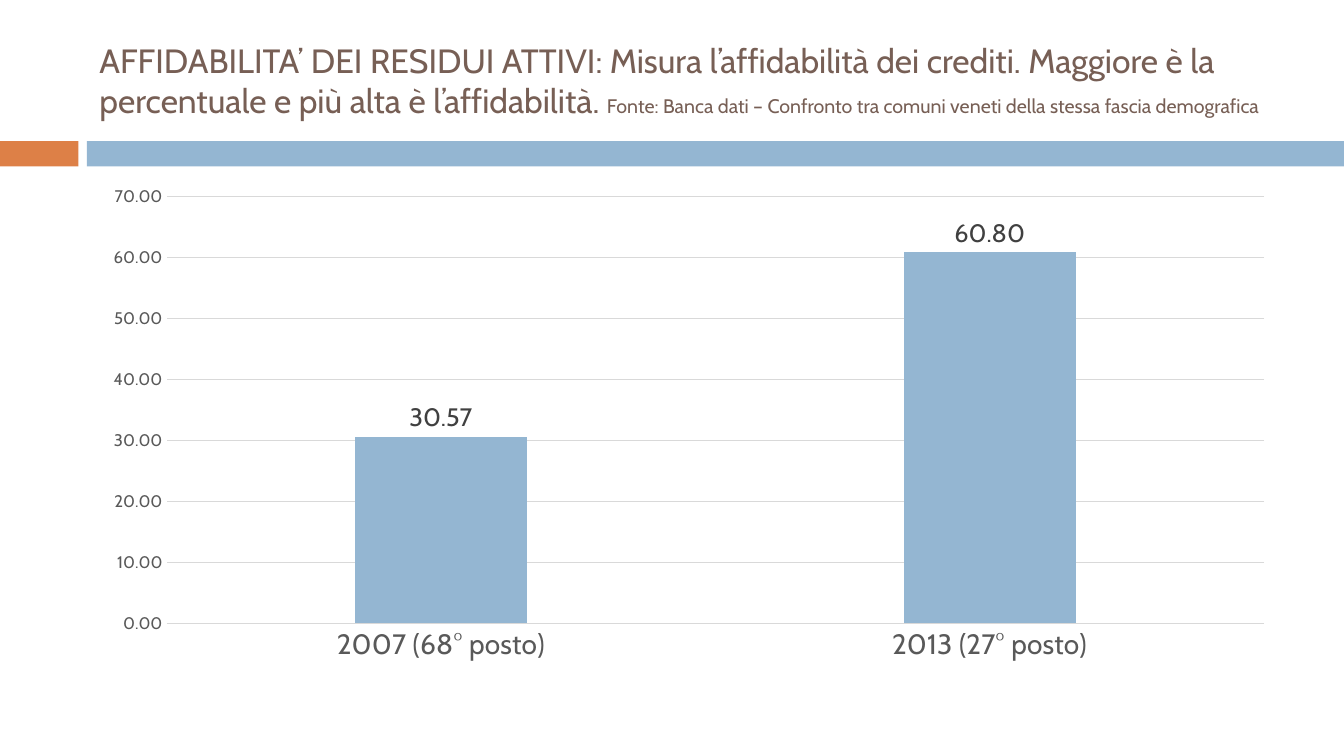
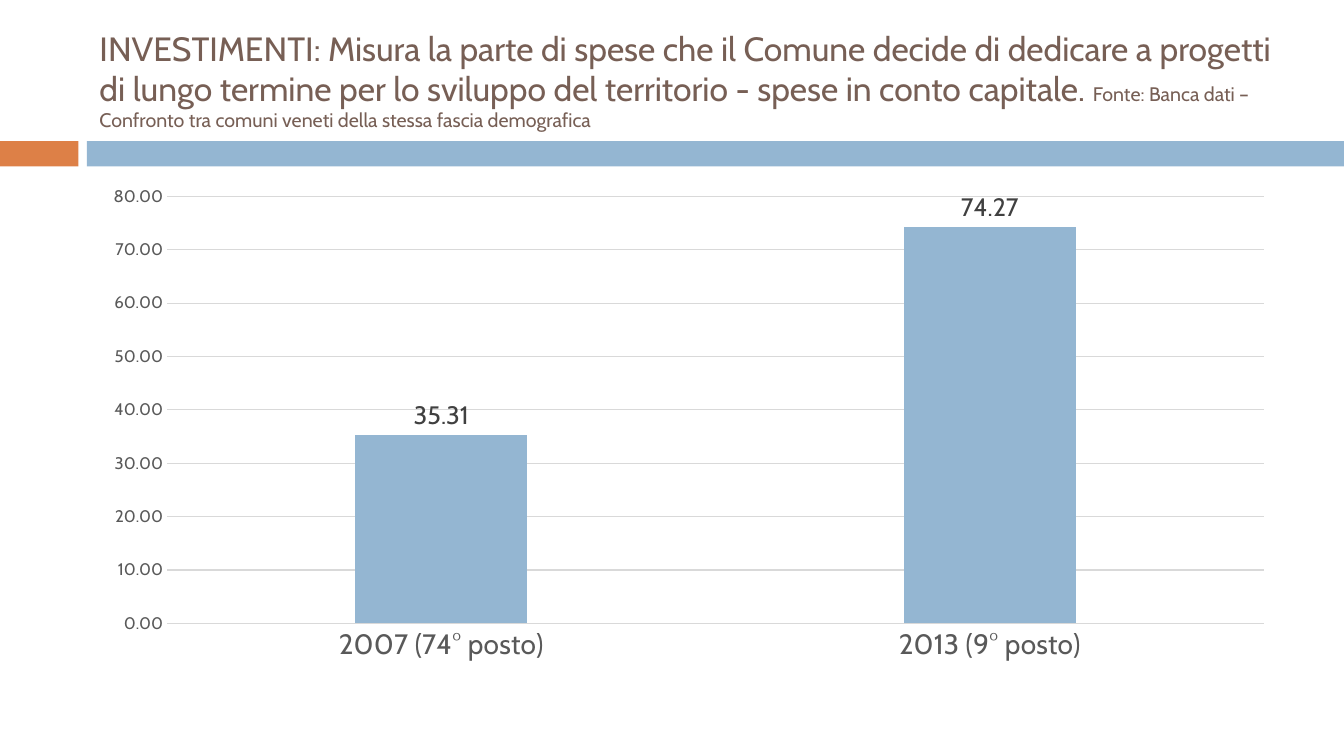
import pptx
import pptx.chart.data
import pptx.dml.color
import pptx.enum.chart
import pptx.enum.shapes
import pptx.enum.text
import pptx.util

Pt = pptx.util.Pt


def color(value):
    return pptx.dml.color.RGBColor.from_string(value)


class Deck:
    """Holds the shared style and draws elements on the current slide."""

    FONT = "Cabin"
    BROWN = "775F55"
    ORANGE = "DD8047"
    BLUE = "94B6D2"
    LABEL_GRAY = "404040"
    AXIS_GRAY = "595959"
    LINE_GRAY = "D9D9D9"
    NUMBER_FORMAT = "#,##0.00"
    WIDTH, HEIGHT = 960, 540
    LEFT, CONTENT_WIDTH = 64, 856
    SOURCE = "Fonte: Banca dati – Confronto tra comuni veneti della stessa fascia demografica"

    def __init__(self):
        self.presentation = pptx.Presentation()
        self.presentation.slide_width = Pt(self.WIDTH)
        self.presentation.slide_height = Pt(self.HEIGHT)
        self.slide = None

    def add_slide(self):
        self.slide = self.presentation.slides.add_slide(self.presentation.slide_layouts[6])
        self.add_band(0, 56, self.ORANGE)
        self.add_band(62, self.WIDTH - 62, self.BLUE)

    def add_band(self, left, width, fill):
        shape = self.slide.shapes.add_shape(
            pptx.enum.shapes.MSO_SHAPE.RECTANGLE, Pt(left), Pt(100.8), Pt(width), Pt(18))
        shape.shadow.inherit = False
        shape.fill.solid()
        shape.fill.fore_color.rgb = color(fill)
        shape.line.fill.background()

    def style_font(self, font, size, value):
        font.name = self.FONT
        font.size = Pt(size)
        font.color.rgb = color(value)

    def add_title(self, text):
        shape = self.slide.shapes.add_textbox(
            Pt(self.LEFT), Pt(18), Pt(self.CONTENT_WIDTH), Pt(78))
        frame = shape.text_frame
        frame.word_wrap = True
        frame.vertical_anchor = pptx.enum.text.MSO_ANCHOR.MIDDLE
        paragraph = frame.paragraphs[0]
        for content, size in ((text + " ", 24), (self.SOURCE, 14)):
            run = paragraph.add_run()
            run.text = content
            self.style_font(run.font, size, self.BROWN)

    def style_line(self, line):
        line.color.rgb = color(self.LINE_GRAY)
        line.width = Pt(0.75)

    def add_column_chart(self, values, maximum):
        data = pptx.chart.data.CategoryChartData(number_format=self.NUMBER_FORMAT)
        data.categories = list(values)
        data.add_series("Series 1", list(values.values()))
        chart = self.slide.shapes.add_chart(
            pptx.enum.chart.XL_CHART_TYPE.COLUMN_CLUSTERED,
            Pt(self.LEFT), Pt(126), Pt(self.CONTENT_WIDTH), Pt(354), data).chart
        self.style_font(chart.font, 10, "000000")
        chart.has_legend = False
        chart.has_title = False

        for axis, size in ((chart.category_axis, 20), (chart.value_axis, 12)):
            axis.major_tick_mark = pptx.enum.chart.XL_TICK_MARK.NONE
            axis.minor_tick_mark = pptx.enum.chart.XL_TICK_MARK.NONE
            self.style_font(axis.tick_labels.font, size, self.AXIS_GRAY)
        self.style_line(chart.category_axis.format.line)

        value_axis = chart.value_axis
        value_axis.minimum_scale = 0
        value_axis.maximum_scale = maximum
        value_axis.major_unit = 10
        value_axis.format.line.fill.background()
        value_axis.has_major_gridlines = True
        self.style_line(value_axis.major_gridlines.format.line)
        value_axis.tick_labels.number_format = self.NUMBER_FORMAT
        value_axis.tick_labels.number_format_is_linked = False

        plot = chart.plots[0]
        plot.gap_width = 219
        plot.overlap = -27
        plot.vary_by_categories = False
        series = plot.series[0]
        series.format.fill.solid()
        series.format.fill.fore_color.rgb = color(self.BLUE)
        labels = series.data_labels
        labels.show_value = True
        labels.position = pptx.enum.chart.XL_LABEL_POSITION.OUTSIDE_END
        labels.number_format = self.NUMBER_FORMAT
        labels.number_format_is_linked = False
        self.style_font(labels.font, 18, self.LABEL_GRAY)


def main():
    indicators = (
        ("AFFIDABILITA’ DEI RESIDUI ATTIVI: Misura l’affidabilità dei crediti. "
         "Maggiore è la percentuale e più alta è l’affidabilità.",
         {"2007 (68° posto)": 30.57, "2013 (27° posto)": 60.8}, 70),
        ("INVESTIMENTI: Misura la parte di spese che il Comune decide di dedicare a progetti "
         "di lungo termine per lo sviluppo del territorio - spese in conto capitale.",
         {"2007 (74° posto)": 35.31, "2013 (9° posto)": 74.27}, 80),
    )
    deck = Deck()
    for title, values, maximum in indicators:
        deck.add_slide()
        deck.add_title(title)
        deck.add_column_chart(values, maximum)
    deck.presentation.save("out.pptx")


if __name__ == "__main__":
    main()
